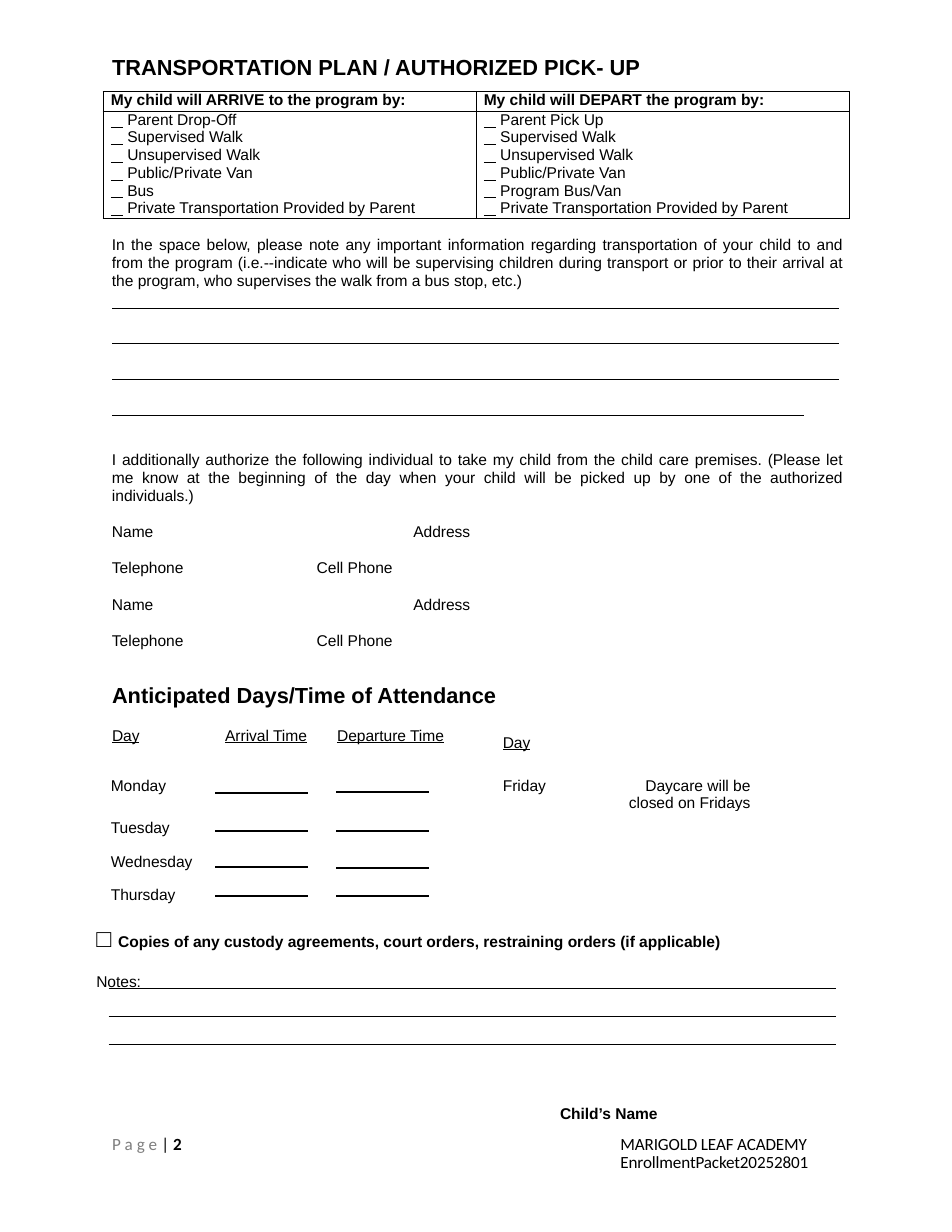
from lxml.etree import SubElement
from pptx import Presentation
from pptx.dml.color import RGBColor as Color
from pptx.enum.shapes import MSO_CONNECTOR as Connector
from pptx.enum.text import PP_ALIGN as Align
from pptx.oxml.ns import qn
from pptx.util import Inches, Pt

COLORS = {"ink": "000000", "muted": "7E7E7E"}
BOLD, UNDER, PLAIN = {"bold": True}, {"under": True}, {}


class Form:
    """Holds the form's style and the page being filled."""

    font, size = "Arial", 10

    def __init__(self, page):
        self.page = page

    def span(self, para, text, bold=False, under=False, size=None,
             font=None, color="ink", spacing=0):
        span = para.add_run()
        span.text = text
        style = span.font
        style.name, style.size = font or self.font, Pt(size or self.size)
        style.bold, style.underline = bold, under
        style.color.rgb = Color.from_string(COLORS[color])
        if spacing:
            span._r.get_or_add_rPr().set("spc", str(round(spacing * 100)))

    def para(self, frame, spans, first=True, align=Align.LEFT, indent=0.01,
             right=0, leading=None, before=0, tabs=()):
        para = frame.paragraphs[0] if first else frame.add_paragraph()
        para.alignment = align
        para.space_before = Pt(before)
        if leading:
            para.line_spacing = leading
        props = para._p.get_or_add_pPr()
        props.set("marL", str(Inches(indent)))
        props.set("marR", str(Inches(right)))
        if tabs:
            stops = SubElement(props, qn("a:tabLst"))
            for stop in tabs:
                SubElement(stops, qn("a:tab"), pos=str(Inches(stop)), algn="l")
        for text, style in spans:
            self.span(para, text, **style)

    def margins(self, holder, top=0):
        holder.margin_left = holder.margin_right = holder.margin_bottom = 0
        holder.margin_top = Inches(top)

    def text(self, left, top, width, height, paras, inset=0.01):
        box = self.page.shapes.add_textbox(*map(Inches, (left, top, width, height)))
        frame = box.text_frame
        frame.word_wrap = True
        self.margins(frame, inset)
        for index, (spans, layout) in enumerate(paras):
            self.para(frame, spans, index == 0, **layout)

    def rule(self, left, top, width, weight):
        line = self.page.shapes.add_connector(
            Connector.STRAIGHT, *map(Inches, (left, top, left + width, top)))
        line.line.color.rgb = Color.from_string(COLORS["ink"])
        line.line.width = Pt(weight)
        SubElement(line._element.spPr, qn("a:effectLst"))

    def border(self, cell):
        props = cell._tc.get_or_add_tcPr()
        for place, side in enumerate(("lnL", "lnR", "lnT", "lnB")):
            edge = SubElement(props, qn("a:" + side), w=str(Pt(0.5)))
            fill = SubElement(edge, qn("a:solidFill"))
            SubElement(fill, qn("a:srgbClr"), val=COLORS["ink"])
            props.insert(place, edge)

    def table(self, left, top, widths, heights, bordered=False):
        shape = self.page.shapes.add_table(
            len(heights), len(widths),
            *map(Inches, (left, top, sum(widths), sum(heights))))
        table = shape.table
        table.first_row = table.horz_banding = False
        for column, width in zip(table.columns, widths):
            column.width = Inches(width)
        for row, height in zip(table.rows, heights):
            row.height = Inches(height)
        for cell in table.iter_cells():
            self.margins(cell)
            cell.fill.background()
            if bordered:
                self.border(cell)
        return table


deck = Presentation()
deck.slide_width, deck.slide_height = Inches(8.5), Inches(11)
form = Form(deck.slides.add_slide(deck.slide_layouts[6]))
heading = {"bold": True, "size": 14}

# Transportation choices
form.text(0.99, 0.47, 6.85, 0.25, [
    ([("TRANSPORTATION PLAN / AUTHORIZED PICK- UP", heading)], {"before": 0.9})])
choices = {
    "My child will ARRIVE to the program by:": ("Parent Drop-Off", "Bus"),
    "My child will DEPART the program by:": ("Parent Pick Up", "Program Bus/Van"),
}
transport = form.table(0.92, 0.82, [3.33] * 2, [0.17, 0.96], bordered=True)
for column, (title, (parent, bus)) in enumerate(choices.items()):
    form.para(transport.cell(0, column).text_frame, [(title, BOLD)],
              indent=0.07, leading=Pt(11))
    options = [parent, "Supervised Walk", "Unsupervised Walk",
               "Public/Private Van", bus, "Private Transportation Provided by Parent"]
    for index, option in enumerate(options):
        form.para(transport.cell(1, column).text_frame,
                  [("  ", {"under": True, "spacing": 2.5}), (option, PLAIN)],
                  index == 0, indent=0.07, leading=Pt(11.4))

# Transportation notes
justified = {"align": Align.JUSTIFY, "leading": 0.95, "before": 1.5}
form.text(0.99, 2.09, 6.53, 0.51, [([(
    "In the space below, please note any important information regarding "
    "transportation of your child to and from the program (i.e.--indicate who "
    "will be supervising children during transport or prior to their arrival at "
    "the program, who supervises the walk from a bus stop, etc.)", PLAIN)],
    justified)], inset=0.02)
for index, width in enumerate((6.49, 6.49, 6.49, 6.18)):
    form.rule(1, 2.75 + 0.32 * index, width, 0.63)

# Authorized individuals
contact = [("Name ", PLAIN), ("\t\t", UNDER), (" Address ", PLAIN), ("\t\t", UNDER),
           (" Telephone ", PLAIN), ("\t", UNDER), (" Cell Phone ", PLAIN),
           ("\t\t", UNDER)]
stops = (1.79, 2.66, 4.09, 6.34)
form.text(0.99, 4.01, 6.53, 1.79, [
    ([("I additionally authorize the following individual to take my child from "
       "the child care premises. (Please let me know at the beginning of the day "
       "when your child will be picked up by one of the authorized individuals.)",
       PLAIN)], justified),
    (contact, {"leading": 1.92, "tabs": stops}),
    (contact, {"leading": Pt(23), "before": 0.9, "tabs": stops})], inset=0.02)

# Attendance headings
form.text(0.99, 6.08, 5.68, 0.57, [
    ([("Anticipated Days/Time of Attendance", heading)], {"before": 0.9}),
    ([("Day", UNDER), ("\t", PLAIN), ("Arrival Time", UNDER), ("\t", PLAIN),
      ("Departure Time", UNDER)], {"before": 11.2, "tabs": (1.01, 2.01)})])
form.text(4.48, 6.53, 0.4, 0.19, [([("Day", UNDER)], {"before": 0.9})])

# Attendance days and time blanks
days = form.table(0.96, 6.94, [0.96, 2.5, 1.13, 1.2, 1.08], [0.3, 0.3, 0.3, 0.23])
for row, day in enumerate(("Monday", "Tuesday", "Wednesday", "Thursday")):
    cell = days.cell(row, 0)
    form.margins(cell, 0.07 if row else 0)
    form.para(cell.text_frame, [(day, PLAIN)], indent=0.03,
              leading=None if row else Pt(11), before=5 if row else 0)
form.para(days.cell(0, 2).text_frame, [("Friday", PLAIN)], indent=0.07,
          leading=Pt(11))
form.para(days.cell(0, 3).text_frame, [("Daycare will be closed on Fridays", PLAIN)],
          align=Align.RIGHT, indent=0, right=0.05, leading=Pt(11))
for left, tops in ((1.92, (7.08, 7.42, 7.74, 8)), (3, (7.07, 7.42, 7.75, 8))):
    for top in tops:
        form.rule(left, top, 0.83, 1.5)

# Custody papers and notes
form.text(0.85, 8.07, 7.26, 0.73, [
    ([("□ ", {"bold": True, "size": 16}),
      ("Copies of any custody agreements, court orders, restraining orders "
       "(if applicable) ", BOLD), ("Notes:", PLAIN)],
     {"leading": Pt(24.4), "before": 5.2, "right": 1.4})], inset=0.1)
for index in range(3):
    form.rule(0.97, 8.83 + 0.25 * index, 6.49, 0.63)

# Footer
form.text(4.99, 9.85, 2.49, 0.19, [
    ([("Child’s Name ", BOLD), ("\t", {"bold": True, "under": True})],
     {"before": 0.9, "tabs": [2.48]})])
footer = {"font": "Calibri", "size": 11}
form.text(0.99, 10.14, 0.75, 0.18, [
    ([("P a g e ", {**footer, "color": "muted"}), ("| ", footer),
      ("2", {**footer, "bold": True})], {"leading": Pt(11.5)})], inset=0)
form.text(5.53, 10.14, 1.98, 0.18, [
    ([("MARIGOLD LEAF ACADEMY EnrollmentPacket20252801",
       {**footer, "spacing": -0.1})], {"leading": Pt(11.5)})], inset=0)

deck.save("out.pptx")
